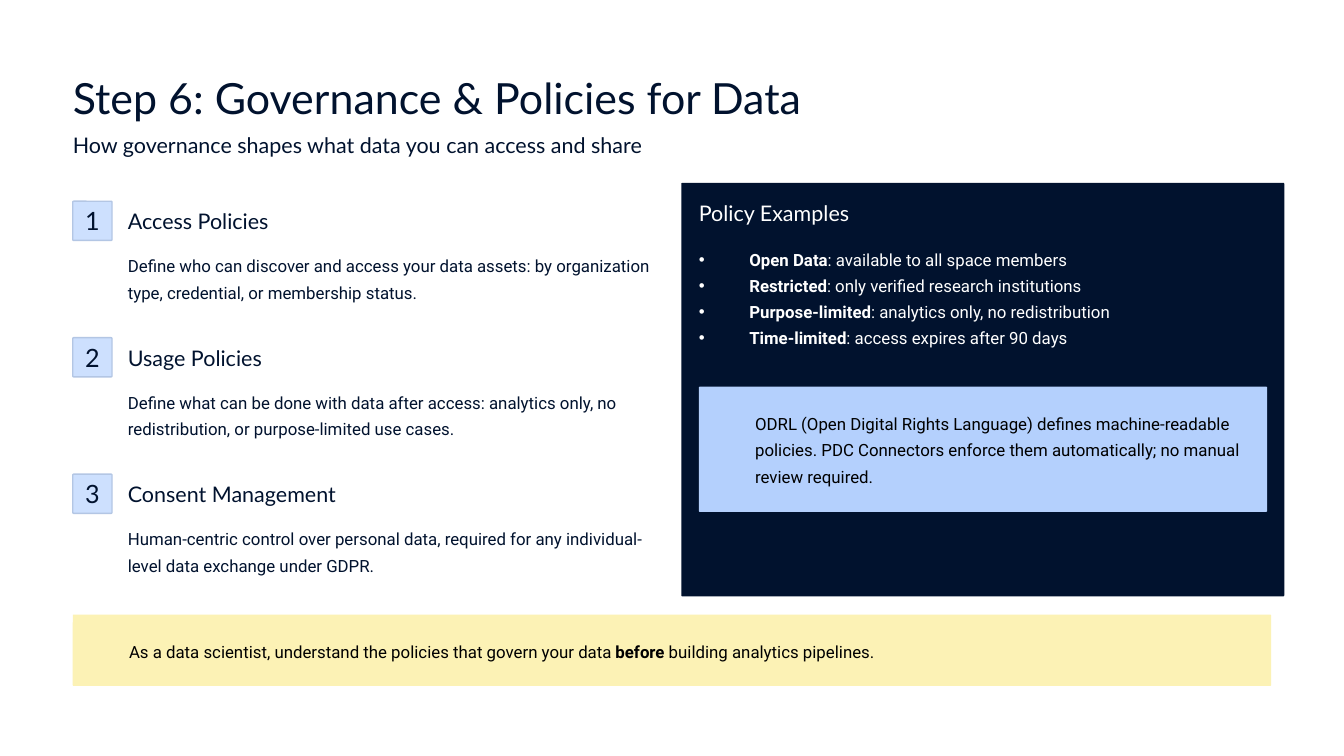
from lxml.etree import SubElement
from pptx import Presentation
from pptx.dml.color import RGBColor
from pptx.enum.shapes import MSO_SHAPE
from pptx.enum.text import MSO_ANCHOR, MSO_AUTO_SIZE, PP_ALIGN
from pptx.oxml.ns import qn
from pptx.util import Pt

INK = {"navy": "01122E", "white": "FFFFFF", "black": "000000", "badge": "CDE0FE",
       "edge": "B3C6E4", "note": "B4D0FD", "tip": "FCF2B5"}
FONT = {"title": {"name": "Lato", "size": Pt(23)},
        "head": {"name": "Lato", "size": Pt(11.5)},
        "badge": {"name": "Lato", "size": Pt(13.5)},
        "text": {"name": "Roboto", "size": Pt(9)}}
SPACE = {"title": 1.04, "head": 1.04, "badge": 1.0, "text": 1.3}
FRAME = {"word_wrap": True, "auto_size": MSO_AUTO_SIZE.NONE, "margin_left": 0,
         "margin_right": 0, "margin_top": 0, "margin_bottom": 0}
STEPS = [
    ("Access Policies", "Define who can discover and access your data assets: "
     "by organization type, credential, or membership status."),
    ("Usage Policies", "Define what can be done with data after access: "
     "analytics only, no redistribution, or purpose-limited use cases."),
    ("Consent Management", "Human-centric control over personal data, required "
     "for any individual-level data exchange under GDPR."),
]
RULES = [("Open Data", ": available to all space members"),
         ("Restricted", ": only verified research institutions"),
         ("Purpose-limited", ": analytics only, no redistribution"),
         ("Time-limited", ": access expires after 90 days")]


def assign(item, values):
    """Set each named value on the item."""
    for key, value in values.items():
        setattr(item, key, value)


def color(key):
    """Return the named colour."""
    return RGBColor.from_string(INK[key])


class Deck:
    """Hold the presentation, its style and the current slide."""

    def __init__(self):
        """Start a deck with one slide."""
        self.deck = Presentation()
        assign(self.deck, {"slide_width": Pt(720), "slide_height": Pt(405)})
        self.slide = self.deck.slides.add_slide(self.deck.slide_layouts[1])
        fill = self.slide.background.fill
        fill.solid()
        fill.fore_color.rgb = color("white")

    def letter(self, shape, lines, style, ink="navy", align=PP_ALIGN.LEFT,
               anchor=MSO_ANCHOR.TOP, bullet=False):
        """Fill a shape with lines of (text, bold) runs."""
        frame = shape.text_frame
        assign(frame, FRAME | {"vertical_anchor": anchor})
        for i, runs in enumerate(lines):
            para = frame.add_paragraph() if i else frame.paragraphs[0]
            if bullet:
                self.mark(para, ink)
            assign(para, {"alignment": align, "line_spacing": SPACE[style],
                          "space_before": Pt(0), "space_after": Pt(0)})
            for text, bold in runs:
                run = para.add_run()
                run.text = text
                assign(run.font, FONT[style] | {"bold": bold})
                run.font.color.rgb = color(ink)

    def mark(self, para, ink):
        """Give a paragraph a hanging bullet."""
        props = para._p.get_or_add_pPr()
        props.set("marL", str(Pt(27)))
        props.set("indent", str(-Pt(27)))
        tint = SubElement(props, qn("a:buClr"))
        SubElement(tint, qn("a:srgbClr"), val=INK[ink])
        SubElement(props, qn("a:buChar"), char="•")

    def place(self, shape, box):
        """Move a shape to a box given in points."""
        assign(shape, dict(zip(("left", "top", "width", "height"), map(Pt, box))))

    def title(self, box, text):
        """Fill the title placeholder."""
        shape = self.slide.shapes.title
        self.place(shape, box)
        self.letter(shape, [[(text, False)]], "title")

    def points(self, box, rules, ink):
        """Fill the body placeholder with bullets and bring it to the front."""
        shape = self.slide.placeholders[1]
        self.place(shape, box)
        self.letter(shape, [[(name, True), (rest, False)] for name, rest in rules],
                    "text", ink, bullet=True)
        self.slide.shapes.element.append(shape.element)

    def text(self, box, runs, style, ink="navy"):
        """Add a text box of one paragraph."""
        shape = self.slide.shapes.add_textbox(*map(Pt, box))
        self.letter(shape, [runs], style, ink)

    def panel(self, box, fill, edge=None):
        """Add a panel with slightly rounded corners."""
        shape = self.slide.shapes.add_shape(MSO_SHAPE.ROUNDED_RECTANGLE, *map(Pt, box))
        shape.adjustments[0] = 0.5 / min(box[2:])
        shape.shadow.inherit = False
        shape.fill.solid()
        shape.fill.fore_color.rgb = color(fill)
        if edge:
            shape.line.color.rgb = color(edge)
            shape.line.width = Pt(0.75)
        else:
            shape.line.fill.background()
        return shape

    def step(self, num, top, head, text):
        """Add a numbered step with its heading and text."""
        badge = self.panel((39, top, 21, 21), "badge", "edge")
        self.letter(badge, [[(str(num), False)]], "badge",
                    align=PP_ALIGN.CENTER, anchor=MSO_ANCHOR.MIDDLE)
        self.text((68.5, top + 3.2, 116, 14.5), [(head, False)], "head")
        self.text((68.5, top + 26.2, 280, 29), [(text, False)], "text")


def main():
    """Build the slide and save it."""
    deck = Deck()
    deck.title((39, 37.5, 451, 29), "Step 6: Governance & Policies for Data")
    deck.text((39, 70, 372, 14.5),
              [("How governance shapes what data you can access and share", False)], "head")
    for i, (head, text) in enumerate(STEPS):
        deck.step(i + 1, 107.8 + 73.1 * i, head, text)
    deck.panel((365, 98, 323, 221.5), "navy")
    deck.text((374.4, 106.7, 152, 14.5), [("Policy Examples", False)], "head", "white")
    deck.points((374.4, 130.3, 304.5, 67), RULES, "white")
    deck.panel((374.4, 207.2, 304.5, 67), "note")
    deck.text((404.5, 218.5, 265, 43),
              [("ODRL (Open Digital Rights Language) defines machine-readable policies. "
                "PDC Connectors enforce them automatically; no manual review required.",
                False)], "text", "black")
    deck.panel((39, 329.3, 642, 38.2), "tip")
    deck.text((69.1, 340.6, 639, 14.5),
              [("As a data scientist, understand the policies that govern your data ", False),
               ("before", True), (" building analytics pipelines.", False)], "text", "black")
    deck.deck.save("out.pptx")


if __name__ == "__main__":
    main()
